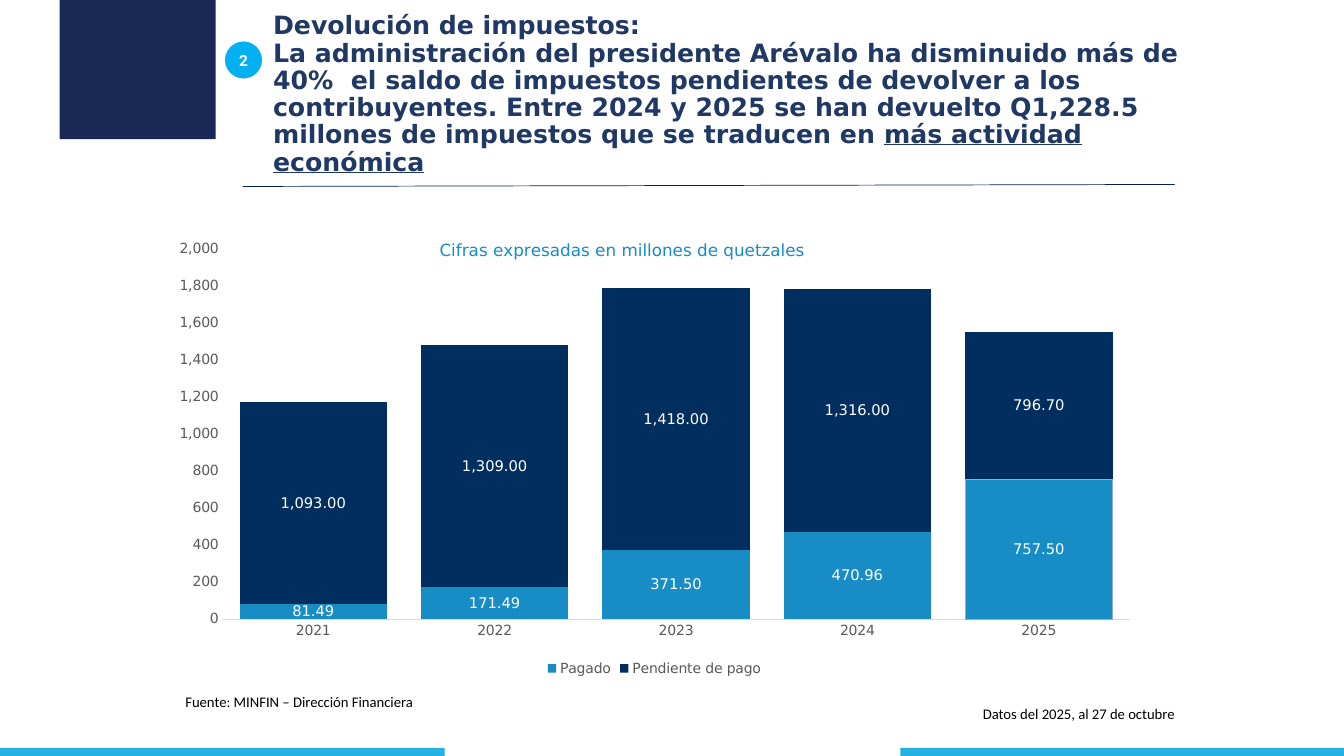
from dataclasses import dataclass

from lxml.etree import SubElement
from pptx import Presentation
from pptx.chart.data import CategoryChartData
from pptx.dml.color import RGBColor
from pptx.enum.chart import XL_CHART_TYPE, XL_LABEL_POSITION, XL_LEGEND_POSITION, XL_TICK_MARK
from pptx.enum.shapes import MSO_CONNECTOR, MSO_SHAPE
from pptx.enum.text import MSO_ANCHOR, PP_ALIGN
from pptx.oxml import parse_xml
from pptx.oxml.ns import nsdecls, qn
from pptx.util import Emu, Pt

WHITE = RGBColor(0xFF, 0xFF, 0xFF)
BLACK = RGBColor(0, 0, 0)
CYAN = RGBColor(0x23, 0xB2, 0xE3)
SKY = RGBColor(0x00, 0xB0, 0xF0)
NAVY = RGBColor(0x19, 0x28, 0x54)
RULE = RGBColor(0x00, 0x20, 0x60)
TITLE = RGBColor(0x20, 0x38, 0x64)
GRAY = RGBColor(0x59, 0x59, 0x59)
PALE = RGBColor(0xD9, 0xD9, 0xD9)
EDGE = RGBColor(0x8F, 0xAA, 0xDC)
BLUE = RGBColor(0x17, 0x8C, 0xC5)
DEEP = RGBColor(0x00, 0x2E, 0x5E)
SANS = "DejaVu Sans"
WIDE, HIGH = 1333, 750


@dataclass
class Box:
    left: int
    top: int
    wide: int
    high: int

    def emu(self) -> list[Emu]:
        return [px(n) for n in (self.left, self.top, self.wide, self.high)]


@dataclass
class Block:
    box: Box
    fill: RGBColor
    kind: MSO_SHAPE = MSO_SHAPE.RECTANGLE


@dataclass
class Note:
    box: Box
    text: str


@dataclass
class Series:
    name: str
    vals: tuple
    color: RGBColor


BLOCKS = [
    Block(Box(0, 742, 441, 8), CYAN),
    Block(Box(893, 742, 440, 8), CYAN),
    Block(Box(59, 0, 155, 138), NAVY),
]
BADGE = Block(Box(222, 40, 39, 39), SKY, MSO_SHAPE.OVAL)
NOTES = [
    Note(Box(965, 694, 349, 28), "Datos del 2025, al 27 de octubre"),
    Note(Box(174, 682, 349, 28), "Fuente: MINFIN – Dirección Financiera"),
]
YEARS = ["2021", "2022", "2023", "2024", "2025"]
SERIES = [
    Series("Pagado", (81.49, 171.49, 371.5, 470.96, 757.5), BLUE),
    Series("Pendiente de pago", (1093, 1309, 1418, 1316, 796.7), DEEP),
]
HEAD = [
    ["Devolución de impuestos:"],
    [
        "La administración del presidente Arévalo ha disminuido más de 40%  el saldo de "
        "impuestos pendientes de devolver a los contribuyentes. Entre 2024 y 2025 se han "
        "devuelto Q1,228.5 millones de impuestos que se traducen en ",
        "más actividad económica",
    ],
]


def px(num: int) -> Emu:
    return Emu(num * 9144)


def style(font, size: float, color: RGBColor, face: str = SANS, bold: bool = False) -> None:
    font.size = Pt(size)
    font.name = face
    font.bold = bold
    font.color.rgb = color


def write(frame, paras: list[list[str]], *, size: float, color: RGBColor, face: str,
          bold: bool = False, align=PP_ALIGN.LEFT, anchor=MSO_ANCHOR.TOP,
          space: float = 1.0, inset: int | None = None) -> None:
    frame.word_wrap = True
    frame.vertical_anchor = anchor
    if inset is not None:
        frame.margin_left = frame.margin_right = px(inset)
        frame.margin_top = frame.margin_bottom = px(inset)
    for pos, runs in enumerate(paras):
        para = frame.add_paragraph() if pos else frame.paragraphs[0]
        para.alignment = align
        para.line_spacing = space
        for turn, text in enumerate(runs):
            run = para.add_run()
            run.text = text
            style(run.font, size, color, face, bold)
            if turn:
                run.font.underline = True


def draw(shapes, block: Block):
    shape = shapes.add_shape(block.kind, *block.box.emu())
    shape.shadow.inherit = False
    shape.fill.solid()
    shape.fill.fore_color.rgb = block.fill
    shape.line.fill.background()
    return shape


def layout(inner: str, **place: float):
    modes = "".join(f'<c:{key}Mode val="edge"/>' for key in "xy")
    spots = "".join(f'<c:{key} val="{val}"/>' for key, val in place.items())
    return parse_xml(
        f'<c:layout {nsdecls("c")}><c:manualLayout>{inner}{modes}{spots}'
        "</c:manualLayout></c:layout>"
    )


def place(node, item, after: str | None = None) -> None:
    for old in node.findall(qn("c:layout")):
        node.remove(old)
    if after:
        node.find(qn(after)).addnext(item)
    else:
        node.insert(0, item)


def plot(shapes, box: Box) -> None:
    data = CategoryChartData(number_format="#,##0.00")
    data.categories = YEARS
    for item in SERIES:
        data.add_series(item.name, item.vals)
    chart = shapes.add_chart(XL_CHART_TYPE.COLUMN_STACKED, *box.emu(), data).chart
    style(chart.font, 10, BLACK)

    chart.has_title = True
    head = chart.chart_title
    write(head.text_frame, [["Cifras expresadas en millones de quetzales"]],
          size=12, color=BLUE, face=SANS, align=PP_ALIGN.CENTER)
    head.include_in_layout = False
    root = chart.element.find(qn("c:chart"))
    place(root.find(qn("c:title")), layout("", x=0.28, y=0.1), "c:tx")
    place(root.find(qn("c:plotArea")),
          layout('<c:layoutTarget val="inner"/>', x=0.064, y=0.127, w=0.916, h=0.749))

    chart.has_legend = True
    chart.legend.position = XL_LEGEND_POSITION.BOTTOM
    chart.legend.include_in_layout = False
    style(chart.legend.font, 10, GRAY)

    for axis in (chart.category_axis, chart.value_axis):
        axis.major_tick_mark = axis.minor_tick_mark = XL_TICK_MARK.NONE
        axis.has_major_gridlines = False
        style(axis.tick_labels.font, 10, GRAY)
    chart.category_axis.format.line.color.rgb = PALE
    chart.category_axis.format.line.width = Pt(0.75)
    scale = chart.value_axis
    scale.format.line.fill.background()
    scale.minimum_scale, scale.maximum_scale, scale.major_unit = 0, 2000, 200
    scale.tick_labels.number_format = "#,##0"
    scale.tick_labels.number_format_is_linked = False

    bars = chart.plots[0]
    bars.gap_width, bars.overlap, bars.vary_by_categories = 23, 100, False
    for row, item in zip(bars.series, SERIES):
        row.format.fill.solid()
        row.format.fill.fore_color.rgb = item.color
        tags = row.data_labels
        tags.show_value = True
        tags.position = XL_LABEL_POSITION.CENTER
        tags.number_format = "#,##0.00"
        tags.number_format_is_linked = False
        style(tags.font, 10.5, WHITE)
    last = bars.series[0].points[len(YEARS) - 1].format
    last.fill.solid()
    last.fill.fore_color.rgb = BLUE
    last.line.color.rgb = EDGE
    last.line.width = Pt(0.5)


def main() -> None:
    deck = Presentation()
    deck.slide_width, deck.slide_height = px(WIDE), px(HIGH)
    shapes = deck.slides.add_slide(deck.slide_layouts[6]).shapes
    for block in BLOCKS:
        draw(shapes, block)
    badge = draw(shapes, BADGE)
    badge.line.color.rgb = WHITE
    badge.line.width = Pt(1.5)
    write(badge.text_frame, [["2"]], size=11, color=WHITE, face="Roboto", bold=True,
          align=PP_ALIGN.CENTER, anchor=MSO_ANCHOR.MIDDLE, inset=0)
    rule = shapes.add_connector(MSO_CONNECTOR.STRAIGHT, px(241), px(185), px(1165), px(183))
    rule.line.color.rgb = RULE
    rule.line.width = Pt(0.5)
    SubElement(rule.element.spPr, qn("a:effectLst"))
    head = shapes.add_textbox(*Box(261, 40, 924, 140).emu())
    write(head.text_frame, HEAD, size=18, color=TITLE, face=SANS, bold=True,
          anchor=MSO_ANCHOR.BOTTOM, space=0.9)
    for note in NOTES:
        area = shapes.add_textbox(*note.box.emu())
        write(area.text_frame, [[note.text]], size=10.5, color=BLACK, face="Calibri")
    plot(shapes, Box(158, 185, 982, 490))
    deck.save("out.pptx")


if __name__ == "__main__":
    main()
